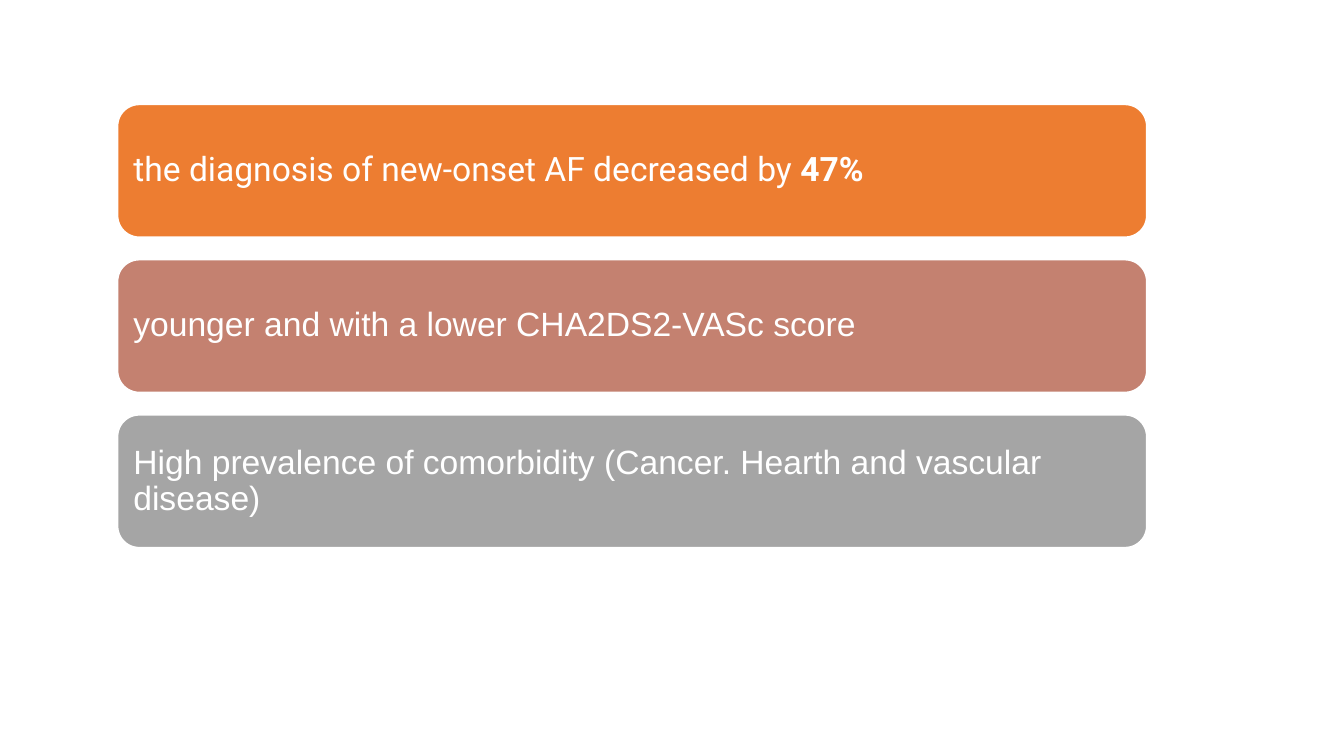
import pptx
import pptx.dml.color
import pptx.enum.shapes
import pptx.enum.text
import pptx.util
from pptx.util import Inches

COLORS = {
    "white": "FFFFFF",
    "orange": "ED7D31",
    "rose": "C48170",
    "gray": "A5A5A5",
}
FINDINGS = [
    ("orange", "Roboto", [("the diagnosis of new-onset AF decreased by ", False), ("47%", True)]),
    ("rose", "Arial", [("younger and with a lower CHA2DS2-VASc score", False)]),
    ("gray", "Arial", [("High prevalence of comorbidity (Cancer. Hearth and vascular disease)", False)]),
]
FIRST_TOP = 1.03
PITCH = 1.54


def rgb(name):
    return pptx.dml.color.RGBColor.from_string(COLORS[name])


presentation = pptx.Presentation()
presentation.slide_width = Inches(13.33)
presentation.slide_height = Inches(7.5)
slide = presentation.slides.add_slide(presentation.slide_layouts[6])

for index, (color, font_name, runs) in enumerate(FINDINGS):
    shape = slide.shapes.add_shape(
        pptx.enum.shapes.MSO_SHAPE.ROUNDED_RECTANGLE,
        Inches(1.16), Inches(FIRST_TOP + index * PITCH), Inches(10.22), Inches(1.33),
    )
    shape.shadow.inherit = False
    shape.fill.solid()
    shape.fill.fore_color.rgb = rgb(color)
    shape.line.color.rgb = rgb("white")
    shape.line.width = pptx.util.Pt(2)

    text_frame = shape.text_frame
    text_frame.word_wrap = True
    text_frame.vertical_anchor = pptx.enum.text.MSO_ANCHOR.MIDDLE
    text_frame.margin_left = text_frame.margin_right = Inches(0.1)
    text_frame.margin_top = text_frame.margin_bottom = Inches(0.1)

    paragraph = text_frame.paragraphs[0]
    paragraph.alignment = pptx.enum.text.PP_ALIGN.LEFT
    paragraph.line_spacing = 0.9
    for text, bold in runs:
        run = paragraph.add_run()
        run.text = text
        run.font.name = font_name
        run.font.size = pptx.util.Pt(24)
        run.font.bold = bold
        run.font.color.rgb = rgb("white")

presentation.save("out.pptx")
